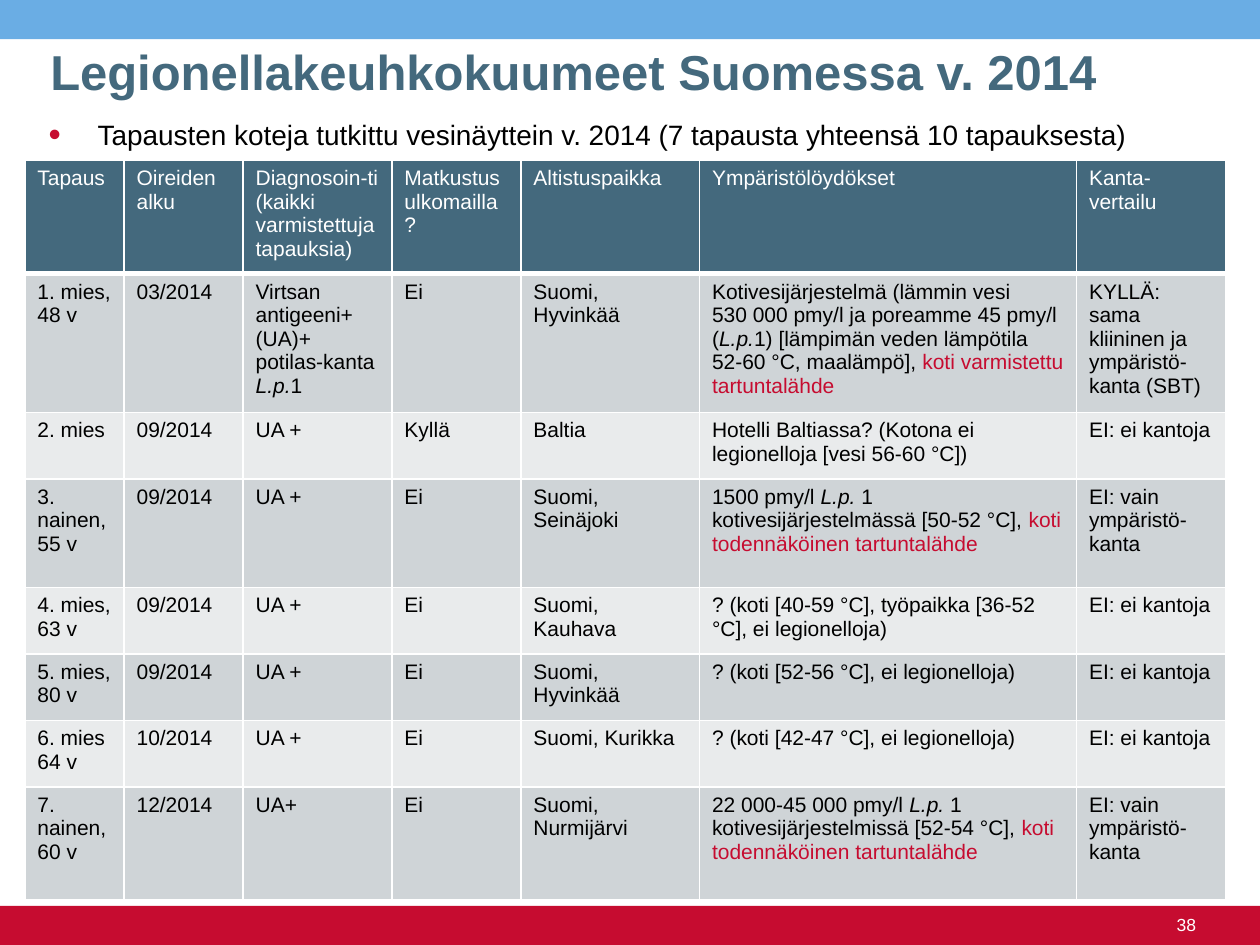
from lxml.etree import SubElement
from pptx import Presentation
from pptx.dml.color import RGBColor
from pptx.enum.shapes import MSO_SHAPE
from pptx.enum.text import MSO_ANCHOR, MSO_AUTO_SIZE, PP_ALIGN
from pptx.oxml.ns import qn
from pptx.util import Cm, Pt

SKY = RGBColor(0x6A, 0xAD, 0xE4)
RED = RGBColor(0xC6, 0x0C, 0x30)
SLATE = RGBColor(0x44, 0x69, 0x7D)
GREY = RGBColor(0xCF, 0xD4, 0xD7)
PALE = RGBColor(0xE9, 0xEB, 0xEC)
WHITE = RGBColor(0xFF, 0xFF, 0xFF)
BLACK = RGBColor(0x00, 0x00, 0x00)

PAGE_WIDTH, PAGE_HEIGHT, BAND_HEIGHT = Cm(25.4), Cm(19.05), Cm(0.79)
COLUMN_WIDTHS = [2, 2.4, 3, 2.6, 3.6, 7.6, 3]
ROW_HEIGHTS = [2.27, 2.79, 1.34, 2.19, 1.34, 1.34, 1.34, 2.28]

# A cell is a string, or a list of strings and (text, style) pairs.
ITALIC, SOURCE = {"italic": True}, {"color": RED}
LIKELY_HOME = ("koti todennäköinen tartuntalähde", SOURCE)
ROWS = [
    ["Tapaus", "Oireiden alku", "Diagnosoin-ti (kaikki varmistettuja tapauksia)",
     "Matkustus ulkomailla?", "Altistuspaikka", "Ympäristölöydökset", "Kanta-vertailu"],
    ["1. mies, 48 v", "03/2014",
     ["Virtsan antigeeni+ (UA)+ potilas-kanta ", ("L.p.", ITALIC), "1"],
     "Ei", "Suomi, Hyvinkää",
     ["Kotivesijärjestelmä (lämmin vesi\n530 000 pmy/l ja poreamme 45 pmy/l (",
      ("L.p.", ITALIC), "1) [lämpimän veden lämpötila 52-60 °C, maalämpö], ",
      ("koti varmistettu tartuntalähde", SOURCE)],
     "KYLLÄ: sama kliininen ja ympäristö-kanta (SBT)"],
    ["2. mies", "09/2014", "UA +", "Kyllä", "Baltia",
     "Hotelli Baltiassa? (Kotona ei legionelloja [vesi 56-60 °C])", "EI: ei kantoja"],
    ["3. nainen, 55 v", "09/2014", "UA +", "Ei", "Suomi, Seinäjoki",
     ["1500 pmy/l ", ("L.p. ", ITALIC), "1 kotivesijärjestelmässä [50-52 °C], ", LIKELY_HOME],
     "EI: vain ympäristö-kanta"],
    ["4. mies, 63 v", "09/2014", "UA +", "Ei", "Suomi, Kauhava",
     "? (koti [40-59 °C], työpaikka [36-52 °C], ei legionelloja)", "EI: ei kantoja"],
    ["5. mies, 80 v", "09/2014", "UA +", "Ei", "Suomi, Hyvinkää",
     "? (koti [52-56 °C], ei legionelloja)", "EI: ei kantoja"],
    ["6. mies 64 v", "10/2014", "UA +", "Ei", "Suomi, Kurikka",
     "? (koti [42-47 °C], ei legionelloja)", "EI: ei kantoja"],
    ["7. nainen, 60 v", "12/2014", "UA+", "Ei", "Suomi, Nurmijärvi",
     ["22 000-45 000 pmy/l ", ("L.p. ", ITALIC), "1 kotivesijärjestelmissä [52-54 °C], ",
      LIKELY_HOME],
     "EI: vain ympäristö-kanta"],
]


def add_span(paragraph, text, size, color, bold=False, italic=False):
    """Add one run; each newline in the text becomes a line break."""
    for index, line in enumerate(text.split("\n")):
        if index:
            paragraph.add_line_break()
        span = paragraph.add_run()
        span.text = line
        font = span.font
        font.name, font.size, font.bold, font.italic = "Arial", Pt(size), bold, italic
        font.color.rgb = color


def add_band(page, top, color):
    band = page.shapes.add_shape(MSO_SHAPE.RECTANGLE, 0, top, PAGE_WIDTH, BAND_HEIGHT)
    band.shadow.inherit = False
    band.fill.solid()
    band.fill.fore_color.rgb = color
    band.line.fill.background()


def format_title(page):
    title = page.shapes.title
    title.left, title.top, title.width, title.height = Cm(0.76), Cm(0.74), Cm(23.4), Cm(1.57)
    frame = title.text_frame
    frame.auto_size = MSO_AUTO_SIZE.NONE
    frame.vertical_anchor = MSO_ANCHOR.MIDDLE
    paragraph = frame.paragraphs[0]
    paragraph.alignment = PP_ALIGN.LEFT
    paragraph.line_spacing = 0.85
    add_span(paragraph, "Legionellakeuhkokuumeet Suomessa v. 2014", 28, SLATE, bold=True)


def add_bullet_line(page, text):
    box = page.shapes.add_textbox(Cm(0.5), Cm(2.34), Cm(24.9), Cm(0.9))
    box.text_frame.word_wrap = True
    paragraph = box.text_frame.paragraphs[0]
    paragraph.line_spacing = 0.85
    properties = paragraph._p.get_or_add_pPr()
    properties.set("marL", str(Cm(1.22)))
    properties.set("indent", str(-Cm(0.99)))
    bullet_color = SubElement(properties, qn("a:buClr"))
    SubElement(bullet_color, qn("a:srgbClr"), val=str(RED))
    SubElement(properties, qn("a:buSzPct"), val="125000")
    SubElement(properties, qn("a:buFont"), typeface="Arial")
    SubElement(properties, qn("a:buChar"), char="•")
    add_span(paragraph, text, 16, BLACK)


def add_page_number(page, number):
    box = page.shapes.add_textbox(Cm(21.11), Cm(18.34), Cm(3), Cm(0.6))
    frame = box.text_frame
    frame.margin_left = frame.margin_right = frame.margin_top = frame.margin_bottom = 0
    frame.word_wrap = True
    frame.vertical_anchor = MSO_ANCHOR.MIDDLE
    frame.paragraphs[0].alignment = PP_ALIGN.RIGHT
    add_span(frame.paragraphs[0], number, 10, WHITE)


def set_borders(cell, bottom_width):
    properties = cell._tc.get_or_add_tcPr()
    for side, width in zip("LRTB", (1, 1, 1, bottom_width)):
        border = SubElement(properties, qn(f"a:ln{side}"), w=str(Pt(width)))
        fill = SubElement(border, qn("a:solidFill"))
        SubElement(fill, qn("a:srgbClr"), val=str(WHITE))


def fill_cell(cell, content, background, color, bottom_width):
    set_borders(cell, bottom_width)
    cell.fill.solid()
    cell.fill.fore_color.rgb = background
    for part in [content] if isinstance(content, str) else content:
        text, style = (part, {}) if isinstance(part, str) else part
        add_span(cell.text_frame.paragraphs[0], text, 12, **{"color": color, **style})


def add_case_table(page):
    table = page.shapes.add_table(
        len(ROWS), len(COLUMN_WIDTHS), Cm(0.5), Cm(3.23),
        Cm(sum(COLUMN_WIDTHS)), Cm(sum(ROW_HEIGHTS))).table
    for column, width in zip(table.columns, COLUMN_WIDTHS):
        column.width = Cm(width)
    for index, (row, height, contents) in enumerate(zip(table.rows, ROW_HEIGHTS, ROWS)):
        row.height = Cm(height)
        if index == 0:
            look = SLATE, WHITE, 3
        else:
            look = GREY if index % 2 else PALE, BLACK, 1
        for cell, content in zip(row.cells, contents):
            fill_cell(cell, content, *look)


def main():
    deck = Presentation()
    deck.slide_width, deck.slide_height = PAGE_WIDTH, PAGE_HEIGHT
    page = deck.slides.add_slide(deck.slide_layouts[5])
    add_band(page, 0, SKY)
    add_band(page, PAGE_HEIGHT - BAND_HEIGHT, RED)
    add_page_number(page, "38")
    add_bullet_line(
        page, "Tapausten koteja tutkittu vesinäyttein v. 2014 (7 tapausta yhteensä 10 tapauksesta)")
    format_title(page)
    add_case_table(page)
    deck.save("out.pptx")


if __name__ == "__main__":
    main()
